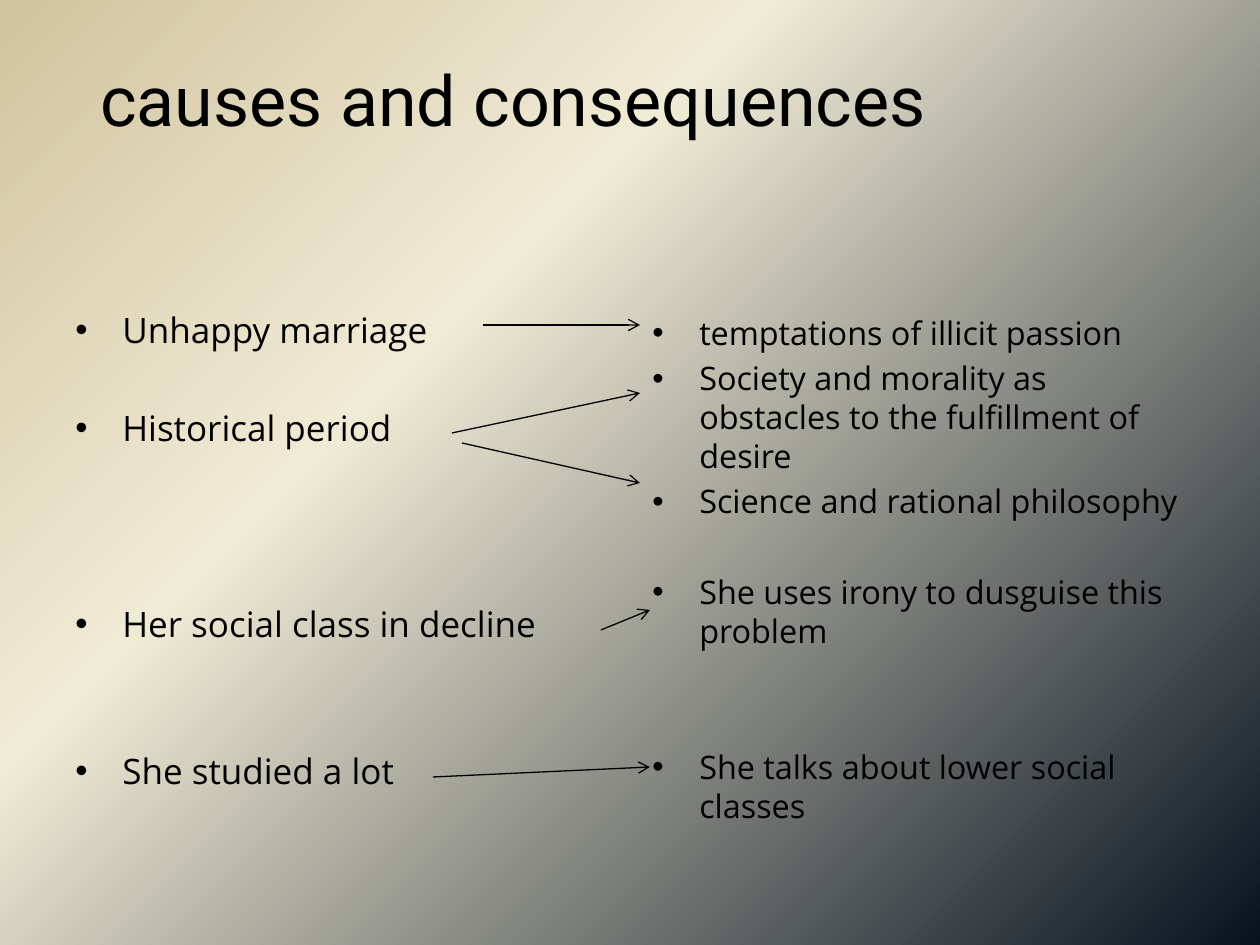
import pptx
import pptx.util
import pptx.dml.color
import pptx.enum.shapes
import pptx.enum.text
import pptx.oxml
import pptx.oxml.ns
from dataclasses import dataclass
from lxml import etree

PX = 914400 // 126


@dataclass(frozen=True)
class Theme:
    ink: str = "000000"
    head: str = "Roboto"
    body: str = "Open Sans"
    title: float = 40
    left: float = 20
    right: float = 18.5
    line: float = 0.75
    stops: tuple = ((0, "08121F"), (65, "F0EBD5"), (100, "D1C39F"))
    angle: int = 225


THEME = Theme()
INK = pptx.dml.color.RGBColor.from_string(THEME.ink)
PT = pptx.util.Pt


def add(node, tag, **attrs):
    return etree.SubElement(node, pptx.oxml.ns.qn(tag), attrs)


def paint(slide):
    fill = slide.background.fill
    fill.gradient()
    fill.gradient_angle = 360 - THEME.angle
    grad = slide.background._cSld.find(".//" + pptx.oxml.ns.qn("a:gradFill"))
    stops = grad.find(pptx.oxml.ns.qn("a:gsLst"))
    for old in list(stops):
        stops.remove(old)
    for place, color in THEME.stops:
        stop = add(stops, "a:gs", pos=str(place * 1000))
        add(stop, "a:srgbClr", val=color)


def frame(slide, box):
    text = slide.shapes.add_textbox(*(n * PX for n in box)).text_frame
    text.word_wrap = True
    return text


def style(para, font, size):
    for run in para.runs:
        run.font.name = font
        run.font.size = PT(size)
        run.font.color.rgb = INK


def title(slide, box, words):
    text = frame(slide, box)
    text.vertical_anchor = pptx.enum.text.MSO_ANCHOR.BOTTOM
    text.text = words
    style(text.paragraphs[0], THEME.head, THEME.title)


def column(slide, box, size, items):
    text = frame(slide, box)
    text.text = "\n".join(words for words, skip in items)
    lead = size * 1.2
    gap = size * 0.2
    for spot, (para, (words, skip)) in enumerate(zip(text.paragraphs, items)):
        para.line_spacing = PT(lead)
        if spot:
            para.space_before = PT(gap + skip * (lead + gap))
        props = para._p.get_or_add_pPr()
        props.set("marL", str(47 * PX))
        props.set("indent", str(-47 * PX))
        add(props, "a:buFont", typeface="Arial")
        add(props, "a:buChar", char="•")
        style(para, THEME.body, size)


def arrows(slide, box, links):
    x, y = box[:2]
    for x1, y1, x2, y2 in links:
        link = slide.shapes.add_connector(
            pptx.enum.shapes.MSO_CONNECTOR.STRAIGHT,
            (x + x1) * PX, (y + y1) * PX, (x + x2) * PX, (y + y2) * PX)
        link.line.color.rgb = INK
        link.line.width = PT(THEME.line)
        add(link.line._get_or_add_ln(), "a:tailEnd", type="arrow")
        add(link._element.spPr, "a:effectLst")


def main():
    deck = pptx.Presentation()
    deck.slide_width = 1260 * PX
    deck.slide_height = 945 * PX
    slide = deck.slides.add_slide(deck.slide_layouts[6])
    paint(slide)
    column(slide, (63, 302, 557, 544), THEME.left, [
        ("Unhappy marriage", 0),
        ("Historical period", 1),
        ("Her social class in decline", 3),
        ("She studied a lot", 2),
    ])
    title(slide, (88, 59, 1099, 88), "causes and consequences")
    column(slide, (640, 307, 557, 568), THEME.right, [
        ("temptations of illicit passion", 0),
        ("Society and morality as obstacles to the fulfillment of desire", 0),
        ("Science and rational philosophy", 0),
        ("She uses irony to dusguise this problem", 1),
        ("She talks about lower social classes", 2),
    ])
    arrows(slide, (433, 325, 217, 452), [
        (50, 0, 207, 0),
        (19, 108, 207, 68),
        (29, 118, 207, 158),
        (168, 305, 217, 285),
        (0, 452, 217, 442),
    ])
    deck.save("out.pptx")


if __name__ == "__main__":
    main()
